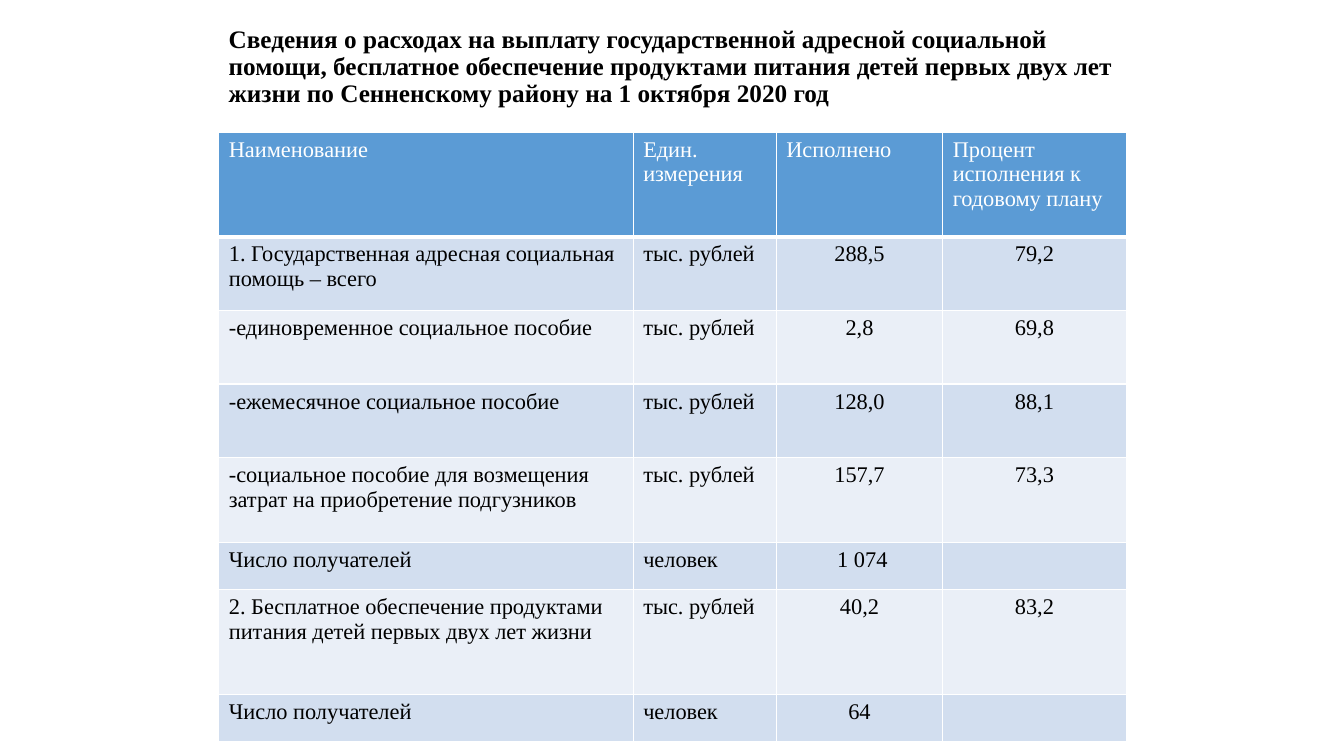
from lxml import etree
from pptx import Presentation
from pptx.dml.color import RGBColor
from pptx.enum.text import MSO_ANCHOR, PP_ALIGN
from pptx.oxml.ns import qn
from pptx.util import Inches, Pt

MIDDLE = MSO_ANCHOR.MIDDLE
LEFT, CENTER = PP_ALIGN.LEFT, PP_ALIGN.CENTER
FONT = "Times New Roman"
COLORS = {
    "text": "000000",
    "white": "FFFFFF",
    "header": "5B9BD5",
    "odd": "D2DEEF",
    "even": "EAEFF7",
}

# Grid of the slide, in inches
MARGIN, TABLE_TOP = 2.17, 1.31
COLUMNS = [4.11, 1.42, 1.65, 1.82]
ROWS = [1.04, 0.73, 0.73, 0.73, 0.84, 0.47, 1.04, 0.47]
WIDTH = sum(COLUMNS)

TITLE = (
    "Сведения о расходах на выплату государственной адресной социальной помощи, "
    "бесплатное обеспечение продуктами питания детей первых двух лет жизни "
    "по Сенненскому району на 1 октября 2020 год"
)
EXPENSES = [
    ("Наименование", "Един. измерения", "Исполнено", "Процент исполнения к годовому плану"),
    ("1. Государственная адресная социальная помощь – всего", "тыс. рублей", "288,5", "79,2"),
    ("-единовременное социальное пособие", "тыс. рублей", "2,8", "69,8"),
    ("-ежемесячное социальное пособие", "тыс. рублей", "128,0", "88,1"),
    ("-социальное пособие для возмещения затрат на приобретение подгузников",
     "тыс. рублей", "157,7", "73,3"),
    ("Число получателей", "человек", " 1 074", ""),
    ("2. Бесплатное обеспечение продуктами питания детей первых двух лет жизни",
     "тыс. рублей", "40,2", "83,2"),
    ("Число получателей", "человек", "64", ""),
]


def add_run(paragraph, text, size, color, bold=False):
    run = paragraph.add_run()
    run.text = text
    run.font.name = FONT
    run.font.size = Pt(size)
    run.font.bold = bold
    run.font.color.rgb = RGBColor.from_string(COLORS[color])


def add_borders(cell, bottom_width):
    properties = cell._tc.get_or_add_tcPr()
    for side, width in (("lnL", 1), ("lnR", 1), ("lnT", 1), ("lnB", bottom_width)):
        line = etree.SubElement(properties, qn(f"a:{side}"), w=str(Pt(width)))
        fill = etree.SubElement(line, qn("a:solidFill"))
        etree.SubElement(fill, qn("a:srgbClr"), val=COLORS["white"])


prs = Presentation()
prs.slide_width, prs.slide_height = Inches(13.33), Inches(7.5)
slide = prs.slides.add_slide(prs.slide_layouts[6])

# Heading
heading = slide.shapes.add_textbox(
    Inches(MARGIN), Inches(0.24), Inches(WIDTH), Inches(0.85)
).text_frame
heading.word_wrap = True
heading.vertical_anchor = MIDDLE
heading.margin_top = heading.margin_bottom = 0
heading.paragraphs[0].line_spacing = 0.9
add_run(heading.paragraphs[0], TITLE, 18, "text", bold=True)

# Expense table
expense_table = slide.shapes.add_table(
    len(ROWS), len(COLUMNS),
    Inches(MARGIN), Inches(TABLE_TOP), Inches(WIDTH), Inches(sum(ROWS)),
).table
for column, width in zip(expense_table.columns, COLUMNS):
    column.width = Inches(width)

for r, (height, values) in enumerate(zip(ROWS, EXPENSES)):
    expense_table.rows[r].height = Inches(height)
    is_header = r == 0
    band = "header" if is_header else "odd" if r % 2 else "even"
    for c, value in enumerate(values):
        cell = expense_table.cell(r, c)
        add_borders(cell, 3 if is_header else 1)
        cell.fill.solid()
        cell.fill.fore_color.rgb = RGBColor.from_string(COLORS[band])
        paragraph = cell.text_frame.paragraphs[0]
        paragraph.alignment = CENTER if c >= 2 and not is_header else LEFT
        if value:
            add_run(paragraph, value, 16, "white" if is_header else "text")

prs.save("out.pptx")
